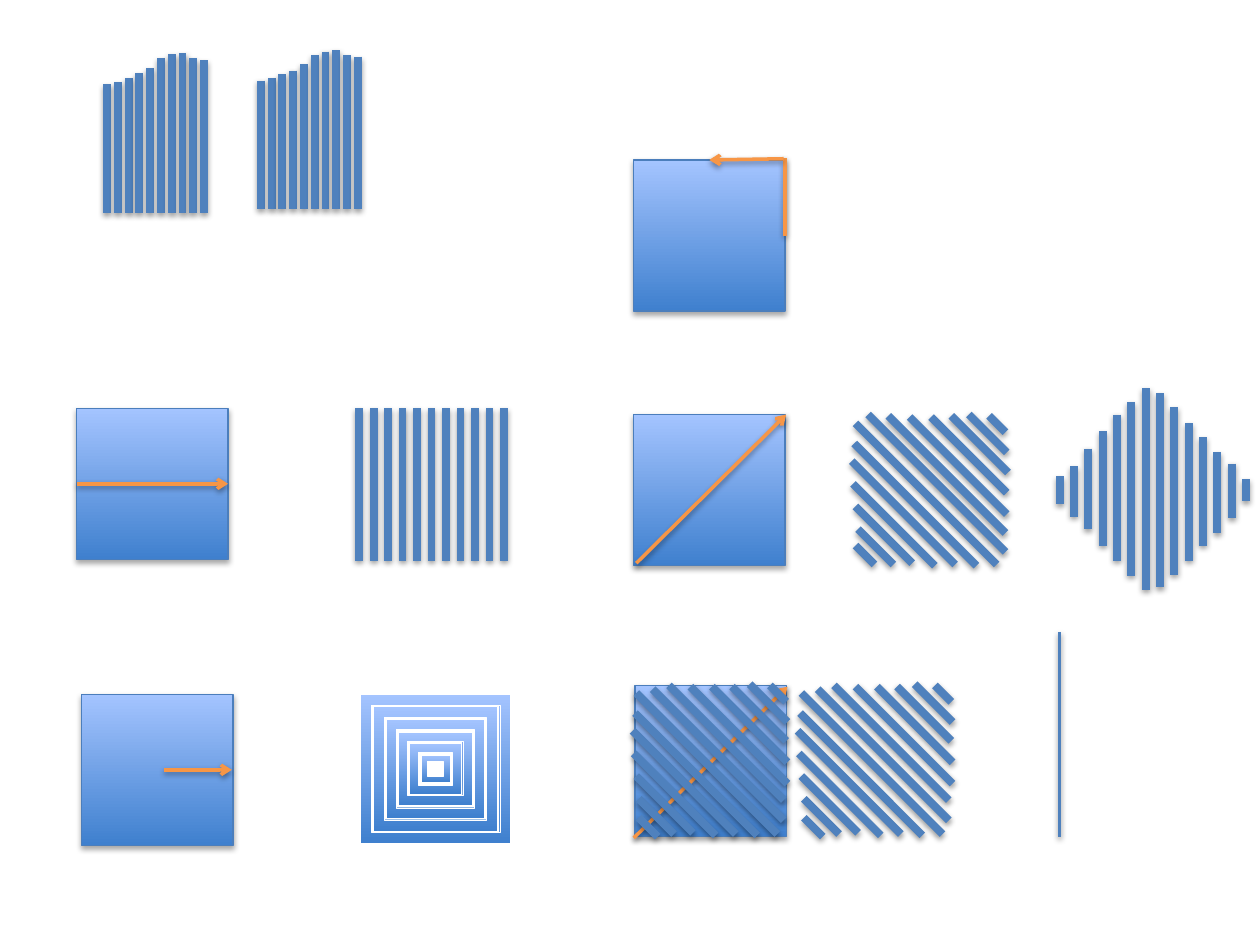
import pptx
import pptx.dml.color
import pptx.enum.shapes
import pptx.util
from lxml import etree
from pptx.oxml.ns import qn

Inches, Pt = pptx.util.Inches, pptx.util.Pt
SHAPES = pptx.enum.shapes.MSO_SHAPE
STRAIGHT = pptx.enum.shapes.MSO_CONNECTOR.STRAIGHT

BLUE, ORANGE, OUTLINE, WHITE = "4F81BD", "F79646", "4B7EBC", "FFFFFF"
GRADIENT = ("3F80CE", "A4C4FF")  # bottom, top
SQUARE_SIDE = 1.2

# Bar sets: first x, last x, (top, bottom) of each bar
LEFT_SKYLINE = (0.85, 1.62, [(top, 1.69) for top in (
    0.67, 0.65, 0.62, 0.58, 0.54, 0.46, 0.43, 0.42, 0.46, 0.48)])
RIGHT_SKYLINE = (2.07, 2.84, [(top, 1.66) for top in (
    0.64, 0.62, 0.59, 0.56, 0.51, 0.44, 0.41, 0.40, 0.44, 0.45)])
EVEN_BARS = (2.85, 4.0, [(3.24, 4.45)] * 11)
DIAMOND_BARS = (8.41, 9.89, [
    (3.78, 4.0), (3.7, 4.1), (3.56, 4.2), (3.42, 4.33), (3.29, 4.45),
    (3.19, 4.57), (3.08, 4.68), (3.12, 4.66), (3.23, 4.56), (3.36, 4.45),
    (3.47, 4.33), (3.59, 4.23), (3.68, 4.11), (3.8, 3.98)])

# Diagonal stripes at 45 degrees: x and y from the hatch corner, extent
STRIPES = [
    (0.05, 0.91, 0.28), (0.03, 0.73, 0.45), (0.01, 0.55, 0.65),
    (0, 0.37, 0.82), (0.02, 0.23, 0.97), (0.03, 0.07, 1.12),
    (0.16, 0.04, 1.04), (0.29, 0.01, 0.91), (0.46, 0.02, 0.77),
    (0.63, 0.02, 0.6), (0.79, 0.02, 0.43), (0.93, 0, 0.3),
    (0.05, 1.06, 0.15), (1.09, 0.01, 0.13)]
UPPER_CHANGES = {6: (0.13, 0, 1.09), 7: (0.29, 0.01, 0.93),
                 10: (0.79, 0.01, 0.45), 12: (0.03, 1.04, 0.15)}
UPPER_STRIPES = [UPPER_CHANGES.get(i, stripe) for i, stripe in enumerate(STRIPES)]

# Nested frames around one centre: width, height, thickness ratio
FRAME_CENTRE = (3.455, 6.1)
FRAMES = [(1.19, 1.18, 0.071), (0.99, 0.99, 0.089), (0.78, 0.79, 0.106),
          (0.59, 0.58, 0.131), (0.41, 0.4, 0.17), (0.23, 0.22, 0.224)]


def color(value):
    return pptx.dml.color.RGBColor.from_string(value)


def add_shadow(shape, opacity, distance):
    """Soft black shadow straight below the shape."""
    properties = shape._element.spPr
    effects = properties.find(qn("a:effectLst"))
    if effects is None:
        effects = etree.SubElement(properties, qn("a:effectLst"))
    shadow = etree.SubElement(effects, qn("a:outerShdw"), blurRad="40000",
                              dist=str(Pt(distance)), dir="5400000", rotWithShape="0")
    black = etree.SubElement(shadow, qn("a:srgbClr"), val="000000")
    etree.SubElement(black, qn("a:alpha"), val=str(opacity * 1000))


def add_gradient_shape(shapes, kind, left, top, width, height, line_color, line_width):
    shape = shapes.add_shape(kind, *map(Inches, (left, top, width, height)))
    shape.fill.gradient()
    shape.fill.gradient_angle = 90
    for stop, value in zip(shape.fill.gradient_stops, GRADIENT):
        stop.color.rgb = color(value)
    shape.line.color.rgb = color(line_color)
    shape.line.width = Pt(line_width)
    shape.shadow.inherit = False
    return shape


def add_square(shapes, left, top):
    square = add_gradient_shape(shapes, SHAPES.RECTANGLE, left, top,
                                SQUARE_SIDE, SQUARE_SIDE, OUTLINE, 0.75)
    add_shadow(square, 35, 1.8)


def add_line(shapes, x1, y1, x2, y2, line_color=BLUE, width=4.5, arrow=False):
    line = shapes.add_connector(STRAIGHT, *map(Inches, (x1, y1, x2, y2)))
    line.line.color.rgb = color(line_color)
    line.line.width = Pt(width)
    if arrow:
        etree.SubElement(line.line._get_or_add_ln(), qn("a:tailEnd"), type="arrow")
    add_shadow(line, 38, 1.6)


def add_arrow(shapes, x1, y1, x2, y2):
    add_line(shapes, x1, y1, x2, y2, ORANGE, 2, arrow=True)


def add_bars(shapes, first, last, spans):
    group = shapes.add_group_shape().shapes
    pitch = (last - first) / (len(spans) - 1)
    for i, (top, bottom) in enumerate(spans):
        x = first + i * pitch
        add_line(group, x, top, x, bottom)


def add_hatch(shapes, left, top, stripes):
    group = shapes.add_group_shape().shapes
    for dx, dy, extent in stripes:
        x, y = left + dx, top + dy
        add_line(group, x, y, x + extent, y + extent)


def main():
    presentation = pptx.Presentation()
    presentation.slide_width, presentation.slide_height = Inches(10), Inches(7.5)
    slide = presentation.slides.add_slide(presentation.slide_layouts[6])
    shapes = slide.shapes

    # Squares with horizontal arrows
    add_square(shapes, 0.65, 5.51)
    add_arrow(shapes, 1.3, 6.11, 1.84, 6.11)
    add_square(shapes, 0.61, 3.24)
    add_arrow(shapes, 0.61, 3.84, 1.81, 3.84)

    # Square with an arrow turning the corner
    add_square(shapes, 5.03, 1.27)
    add_line(shapes, 6.23, 1.87, 6.23, 1.25, ORANGE, 2)
    add_arrow(shapes, 6.22, 1.26, 5.63, 1.27)

    # Vertical bars
    for bars in (LEFT_SKYLINE, RIGHT_SKYLINE, EVEN_BARS, DIAMOND_BARS):
        add_bars(shapes, *bars)
    add_line(shapes, 8.41, 6.64, 8.41, 5.02, width=2)

    # Nested frames
    group = shapes.add_group_shape().shapes
    for width, height, thickness in FRAMES:
        frame = add_gradient_shape(
            group, SHAPES.FRAME, FRAME_CENTRE[0] - width / 2,
            FRAME_CENTRE[1] - height / 2, width, height, WHITE, 0.25)
        frame.adjustments[0] = thickness

    # Squares with diagonal arrows, and their hatches
    add_square(shapes, 5.04, 5.44)
    add_arrow(shapes, 5.03, 6.65, 6.25, 5.45)
    add_hatch(shapes, 5.02, 5.43, STRIPES)
    add_hatch(shapes, 6.33, 5.43, STRIPES)
    add_square(shapes, 5.03, 3.29)
    add_hatch(shapes, 6.76, 3.29, UPPER_STRIPES)
    add_arrow(shapes, 5.05, 4.47, 6.24, 3.29)

    presentation.save("out.pptx")


if __name__ == "__main__":
    main()
